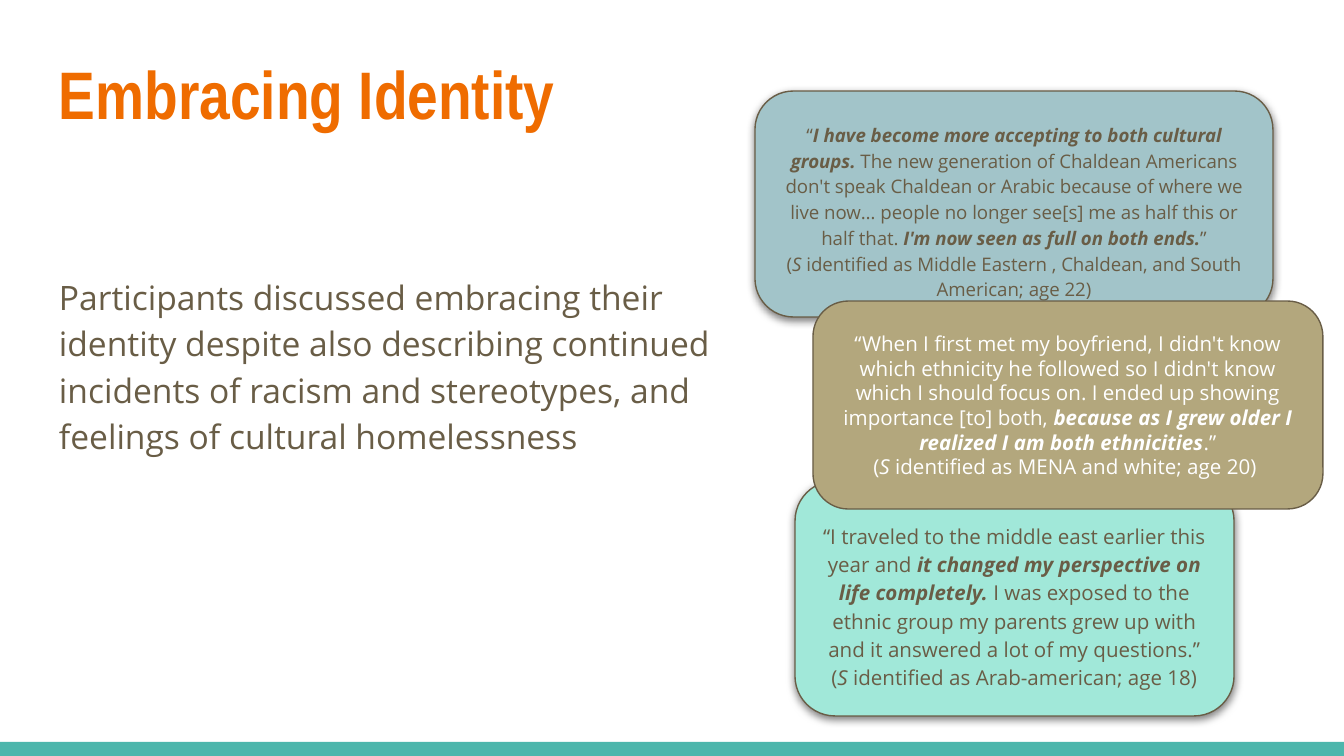
import lxml.etree
import pptx
import pptx.dml.color
import pptx.enum.shapes
import pptx.enum.text
import pptx.oxml
import pptx.oxml.ns
import pptx.util

PX = 914400 / 134.4
INSET = 13
BROWN, WHITE = "695D46", "FFFFFF"
PLAIN = {"bold": False, "italic": False}
STRONG = {"bold": True, "italic": True}
ITALIC = {"bold": False, "italic": True}
SHADOW = (
    f'<a:effectLst {pptx.oxml.ns.nsdecls("a")}>'
    '<a:outerShdw blurRad="57150" dist="19050" dir="5400000" algn="bl" rotWithShape="0">'
    '<a:srgbClr val="000000"><a:alpha val="50000"/></a:srgbClr>'
    '</a:outerShdw></a:effectLst>'
)


def color(value):
    return pptx.dml.color.RGBColor.from_string(value)


def write(shape, paragraphs, font, frame, spacing):
    """Fill a shape with paragraphs, each a list of (text, run format) pairs."""
    text_frame = shape.text_frame
    margins = {f"margin_{side}": round(INSET * PX) for side in ("left", "top", "right", "bottom")}
    for name, value in {"word_wrap": True, **margins, **frame}.items():
        setattr(text_frame, name, value)
    for index, runs in enumerate(paragraphs):
        paragraph = text_frame.add_paragraph() if index else text_frame.paragraphs[0]
        for name, value in spacing.items():
            setattr(paragraph, name, value)
        for text, style in runs:
            run = paragraph.add_run()
            run.text = text
            run.font.color.rgb = color(font["color"])
            run.font.name = font["name"]
            run.font.size = pptx.util.Pt(font["size"])
            for name, value in style.items():
                setattr(run.font, name, value)


presentation = pptx.Presentation()
presentation.slide_width = round(1344 * PX)
presentation.slide_height = round(756 * PX)
slide = presentation.slides.add_slide(presentation.slide_layouts[6])
slide.background.fill.solid()
slide.background.fill.fore_color.rgb = color(WHITE)

footer = slide.shapes.add_shape(
    pptx.enum.shapes.MSO_SHAPE.RECTANGLE, 0, round(742 * PX), round(1344 * PX), round(14 * PX))
footer.shadow.inherit = False
footer.fill.solid()
footer.fill.fore_color.rgb = color("4DB6AC")
footer.line.fill.background()

texts = [
    ((46, 39, 1253, 103), "Embracing Identity",
     {"name": "Arial Narrow", "size": 36, "color": "EF6C00"}, {"bold": True}, {}),
    ((46, 258, 710, 241),
     "Participants discussed embracing their identity despite also describing continued "
     "incidents of racism and stereotypes, and feelings of cultural homelessness",
     {"name": "Open Sans", "size": 18, "color": BROWN}, PLAIN,
     {"line_spacing": 1.15, "space_after": pptx.util.Pt(16)}),
]
for box, text, font, style, spacing in texts:
    shape = slide.shapes.add_textbox(*(round(length * PX) for length in box))
    write(shape, [[(text, style)]], font, {}, spacing)

# Back to front: box, fill, text colour, size, line spacing, shadow, quote, speaker
quotes = [
    ((795, 481, 439, 235), "A1E8D9", BROWN, 11, 1.15, True,
     [("“I traveled to the middle east earlier this year and ", PLAIN),
      ("it changed my perspective on life completely.", STRONG),
      (" I was exposed to the ethnic group my parents grew up with and it answered "
       "a lot of my questions.”", PLAIN)],
     "identified as Arab-american; age 18)"),
    ((755, 91, 518, 226), "A2C4C9", BROWN, 10, 1.15, True,
     [("“", PLAIN),
      ("I have become more accepting to both cultural groups. ", STRONG),
      ("The new generation of Chaldean Americans don't speak Chaldean or Arabic because "
       "of where we live now… people no longer see[s] me as half this or half that.", PLAIN),
      (" I'm now seen as full on both ends.", STRONG),
      ("”", PLAIN)],
     "identified as Middle Eastern , Chaldean, and South American; age 22)"),
    ((813, 301, 510, 208), "B3A77D", WHITE, 11, 1.0, False,
     [("“When I first met my boyfriend, I didn't know which ethnicity he followed so I "
       "didn't know which I should focus on. I ended up showing importance [to] both, ", PLAIN),
      ("because as I grew older I realized I am both ethnicities", STRONG),
      (".”", PLAIN)],
     "identified as MENA and white; age 20) "),
]
for box, fill, text_color, size, line_spacing, shadowed, quote, speaker in quotes:
    card = slide.shapes.add_shape(
        pptx.enum.shapes.MSO_SHAPE.ROUNDED_RECTANGLE, *(round(length * PX) for length in box))
    card.adjustments[0] = 0.17
    card.fill.solid()
    card.fill.fore_color.rgb = color(fill)
    card.line.color.rgb = color(BROWN)
    card.line.width = pptx.util.Pt(0.75)
    if shadowed:
        card._element.spPr.append(pptx.oxml.parse_xml(SHADOW))
    else:
        card.shadow.inherit = False
    write(card, [quote, [("(", PLAIN), ("S ", ITALIC), (speaker, PLAIN)]],
          {"name": "Open Sans", "size": size, "color": text_color},
          {"vertical_anchor": pptx.enum.text.MSO_ANCHOR.MIDDLE,
           "margin_bottom": 0 if shadowed else round(INSET * PX)},
          {"alignment": pptx.enum.text.PP_ALIGN.CENTER, "line_spacing": line_spacing})

presentation.save("out.pptx")
